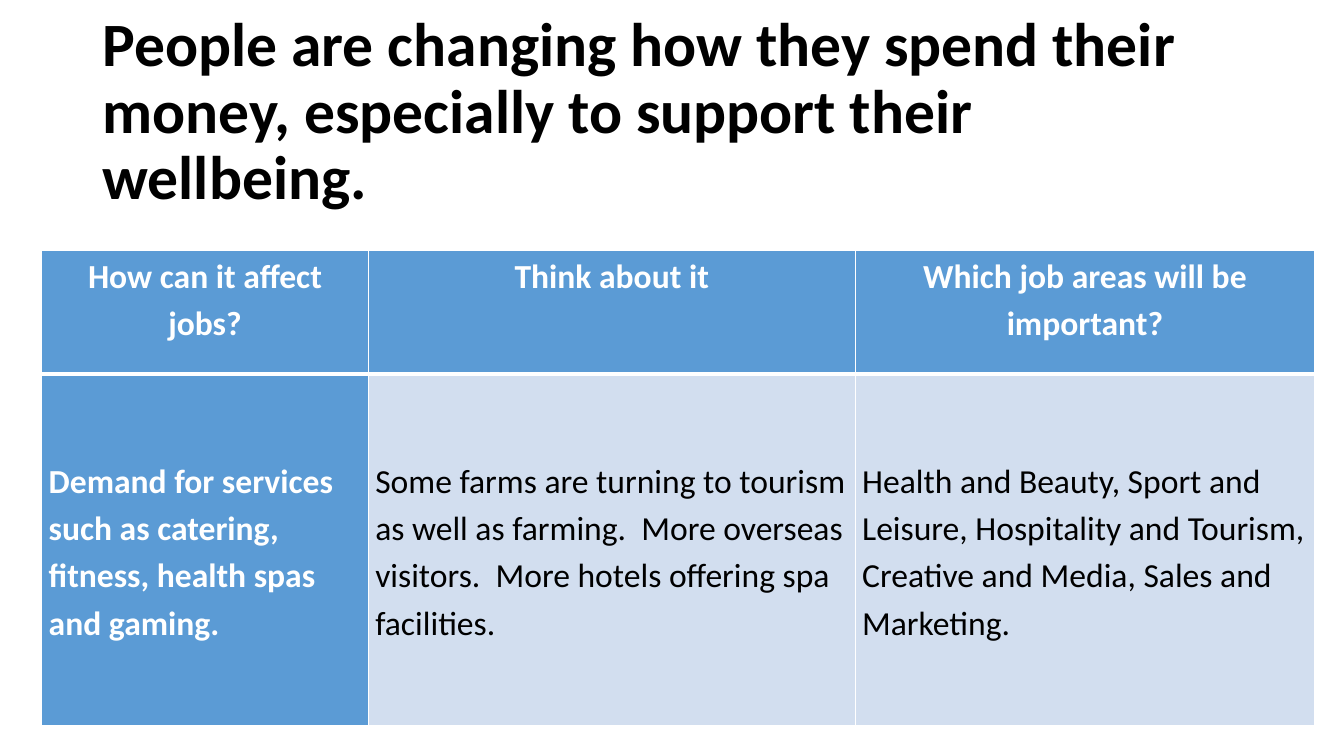
from lxml.etree import SubElement
from pptx import Presentation
from pptx.dml.color import RGBColor
from pptx.enum.text import MSO_ANCHOR, MSO_AUTO_SIZE, PP_ALIGN
from pptx.oxml.ns import qn
from pptx.util import Pt

TITLE = "People are changing how they spend their money, especially to support their wellbeing."
ROWS = [
    ["How can it affect jobs?", "Think about it", "Which job areas will be important?"],
    [
        "Demand for services such as catering, fitness, health spas and gaming.",
        "Some farms are turning to tourism as well as farming.  More overseas visitors.  "
        "More hotels offering spa facilities.",
        "Health and Beauty, Sport and Leisure, Hospitality and Tourism, "
        "Creative and Media, Sales and Marketing.",
    ],
]
COLUMN_WIDTHS = [233.3, 347.8, 328.3]
ROW_HEIGHTS = [88.5, 251.3]
FONT = "Calibri"
BLACK = RGBColor(0x00, 0x00, 0x00)
WHITE = RGBColor(0xFF, 0xFF, 0xFF)
BLUE = RGBColor(0x5B, 0x9B, 0xD5)
PALE_BLUE = RGBColor(0xD2, 0xDE, 0xEF)


def set_font(para, size, color, bold):
    font = para.font
    font.name, font.size, font.bold = FONT, Pt(size), bold
    font.color.rgb = color


def add_borders(cell, top, bottom):
    """Draw white cell borders; call before filling, as lines precede the fill in the XML."""
    properties = cell._tc.get_or_add_tcPr()
    for side, width in (("L", 1), ("R", 1), ("T", top), ("B", bottom)):
        line = SubElement(properties, qn(f"a:ln{side}"), w=str(Pt(width)))
        fill = SubElement(line, qn("a:solidFill"))
        SubElement(fill, qn("a:srgbClr"), val=str(WHITE))


def add_title(page):
    title = page.shapes.title
    title.left, title.top, title.width, title.height = Pt(66), Pt(28.8), Pt(828), Pt(104.4)
    frame = title.text_frame
    frame.text = TITLE
    frame.word_wrap = True
    frame.auto_size = MSO_AUTO_SIZE.NONE
    frame.vertical_anchor = MSO_ANCHOR.MIDDLE
    para = frame.paragraphs[0]
    para.alignment = PP_ALIGN.LEFT
    para.line_spacing = 0.9
    set_font(para, 44, BLACK, True)


def format_cell(cell, text, is_header, is_first_column):
    emphasized = is_header or is_first_column
    add_borders(cell, top=1 if is_header else 3, bottom=3 if is_header else 1)
    cell.fill.solid()
    cell.fill.fore_color.rgb = BLUE if emphasized else PALE_BLUE
    cell.margin_left = cell.margin_right = Pt(5)
    cell.margin_top = cell.margin_bottom = 0
    cell.vertical_anchor = MSO_ANCHOR.TOP if is_header else MSO_ANCHOR.MIDDLE
    cell.text = text
    para = cell.text_frame.paragraphs[0]
    para.alignment = PP_ALIGN.CENTER if is_header else PP_ALIGN.LEFT
    para.line_spacing = 1.15
    para.space_before = Pt(6 if is_header else 0)
    set_font(para, 24, WHITE if emphasized else BLACK, emphasized)


def add_jobs_table(page):
    table = page.shapes.add_table(
        len(ROWS), len(COLUMN_WIDTHS), Pt(29.8), Pt(178.6),
        Pt(sum(COLUMN_WIDTHS)), Pt(sum(ROW_HEIGHTS)),
    ).table
    for column, width in zip(table.columns, COLUMN_WIDTHS):
        column.width = Pt(width)
    for row, height in zip(table.rows, ROW_HEIGHTS):
        row.height = Pt(height)
    for r, texts in enumerate(ROWS):
        for c, text in enumerate(texts):
            format_cell(table.cell(r, c), text, r == 0, c == 0)


def main():
    deck = Presentation()
    deck.slide_width, deck.slide_height = Pt(960), Pt(540)
    page = deck.slides.add_slide(deck.slide_layouts[5])
    add_title(page)
    add_jobs_table(page)
    deck.save("out.pptx")


if __name__ == "__main__":
    main()
